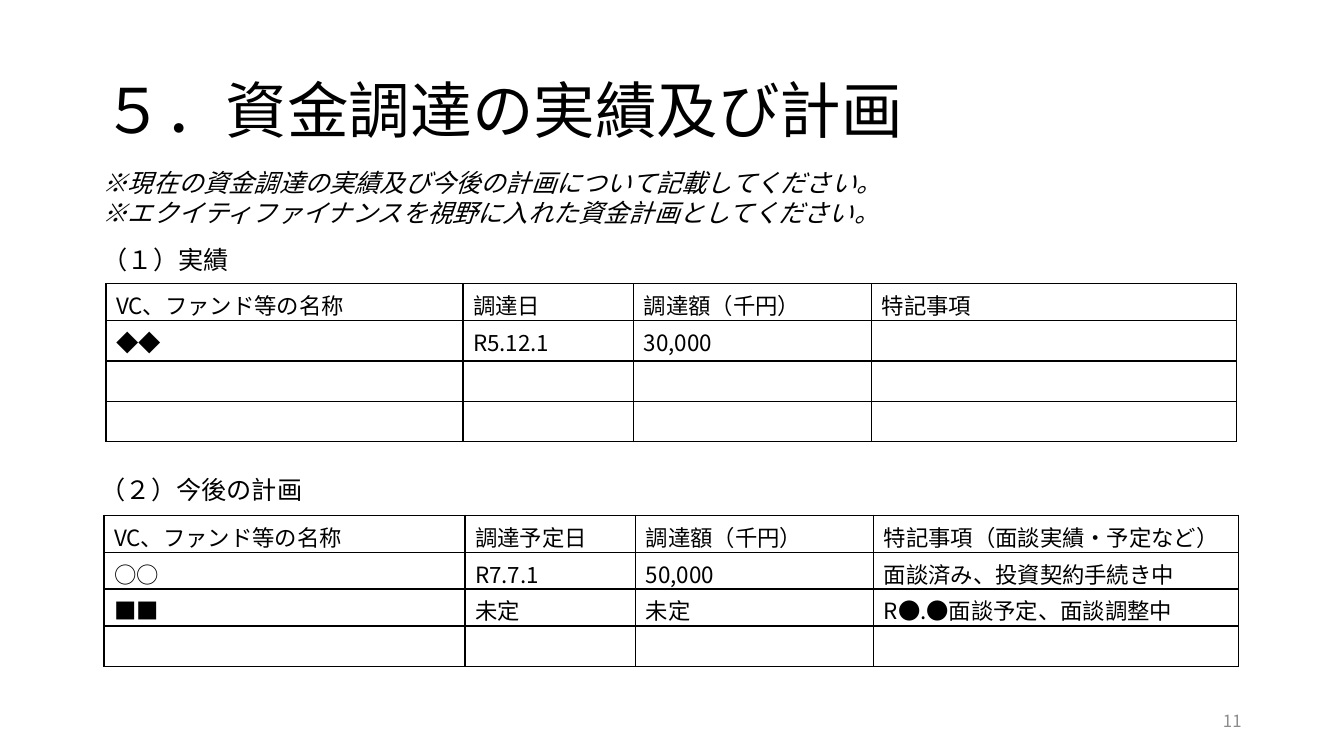
import pptx
import pptx.util
import pptx.dml.color
import pptx.enum.text
import lxml.etree
from pptx.util import Cm

FONT = "Noto Sans CJK JP"
COLOURS = {"text": "000000", "border": "000000", "number": "8C8C8C"}
TITLE = "５．資金調達の実績及び計画"
NOTES = [
    "※現在の資金調達の実績及び今後の計画について記載してください。",
    "※エクイティファイナンスを視野に入れた資金計画としてください。",
]
PAGE_NUMBER = "11"
ROW_HEIGHT = 0.93
SECTIONS = [
    {
        "heading": "（１）実績", "heading_at": (2.34, 6.02),
        "table_at": (2.67, 7.15), "columns": [9.0, 4.3, 6.0, 9.2],
        "rows": [
            ["VC、ファンド等の名称", "調達日", "調達額（千円）", "特記事項"],
            ["◆◆", "R5.12.1", "30,000", ""],
            [""] * 4,
            [""] * 4,
        ],
    },
    {
        "heading": "（２）今後の計画", "heading_at": (2.29, 11.84),
        "table_at": (2.62, 12.98), "columns": [9.1, 4.3, 6.0, 9.2],
        "rows": [
            ["VC、ファンド等の名称", "調達予定日", "調達額（千円）", "特記事項（面談実績・予定など）"],
            ["○○", "R7.7.1", "50,000", "面談済み、投資契約手続き中"],
            ["■■", "未定", "未定", "R●.●面談予定、面談調整中"],
            [""] * 4,
        ],
    },
]


def add_span(para, text, size, colour="text", italic=False):
    span = para.add_run()
    span.text = text
    span.font.size = pptx.util.Pt(size)
    span.font.name = FONT
    span.font.italic = italic
    span.font.color.rgb = pptx.dml.color.RGBColor.from_string(COLOURS[colour])
    east_asian = lxml.etree.SubElement(span.font._element, pptx.oxml.ns.qn("a:ea"))
    east_asian.set("typeface", FONT)


def add_text(page, lines, left, top, width, height, size, **style):
    box = page.shapes.add_textbox(Cm(left), Cm(top), Cm(width), Cm(height))
    box.text_frame.word_wrap = True
    for index, line in enumerate(lines):
        para = box.text_frame.add_paragraph() if index else box.text_frame.paragraphs[0]
        add_span(para, line, size, **style)
    return box


def add_borders(cell):
    properties = cell._tc.get_or_add_tcPr()
    for position, side in enumerate(("lnL", "lnR", "lnT", "lnB")):
        line = pptx.oxml.parse_xml(
            f'<a:{side} {pptx.oxml.ns.nsdecls("a")} w="12700"><a:solidFill>'
            f'<a:srgbClr val="{COLOURS["border"]}"/></a:solidFill></a:{side}>'
        )
        properties.insert(position, line)


def add_funding_table(page, section):
    left, top = section["table_at"]
    rows, columns = section["rows"], section["columns"]
    table = page.shapes.add_table(
        len(rows), len(columns), Cm(left), Cm(top),
        Cm(sum(columns)), Cm(ROW_HEIGHT * len(rows)),
    ).table
    table.first_row = table.horz_banding = False
    for column, width in zip(table.columns, columns):
        column.width = Cm(width)
    for row, texts in zip(table.rows, rows):
        row.height = Cm(ROW_HEIGHT)
        for cell, text in zip(row.cells, texts):
            cell.fill.background()
            cell.vertical_anchor = pptx.enum.text.MSO_ANCHOR.MIDDLE
            add_borders(cell)
            if text:
                add_span(cell.text_frame.paragraphs[0], text, 16)


def add_title(page):
    title = page.shapes.title
    title.left, title.top, title.width, title.height = Cm(2.33), Cm(1.01), Cm(29.21), Cm(3.68)
    title.text_frame.vertical_anchor = pptx.enum.text.MSO_ANCHOR.MIDDLE
    para = title.text_frame.paragraphs[0]
    para.alignment = pptx.enum.text.PP_ALIGN.LEFT
    para.line_spacing = 0.9
    add_span(para, TITLE, 44)


def main():
    deck = pptx.Presentation()
    deck.slide_width, deck.slide_height = Cm(33.87), Cm(19.05)
    page = deck.slides.add_slide(deck.slide_layouts[5])
    add_title(page)
    add_text(page, NOTES, 2.34, 4.09, 24.77, 1.8, 18, italic=True)
    for section in SECTIONS:
        add_text(page, [section["heading"]], *section["heading_at"], 29.21, 1.03, 18)
        add_funding_table(page, section)
    number = add_text(page, [PAGE_NUMBER], 23.92, 17.66, 7.62, 1.01, 12, colour="number")
    number.text_frame.vertical_anchor = pptx.enum.text.MSO_ANCHOR.MIDDLE
    number.text_frame.paragraphs[0].alignment = pptx.enum.text.PP_ALIGN.RIGHT
    deck.save("out.pptx")


if __name__ == "__main__":
    main()
